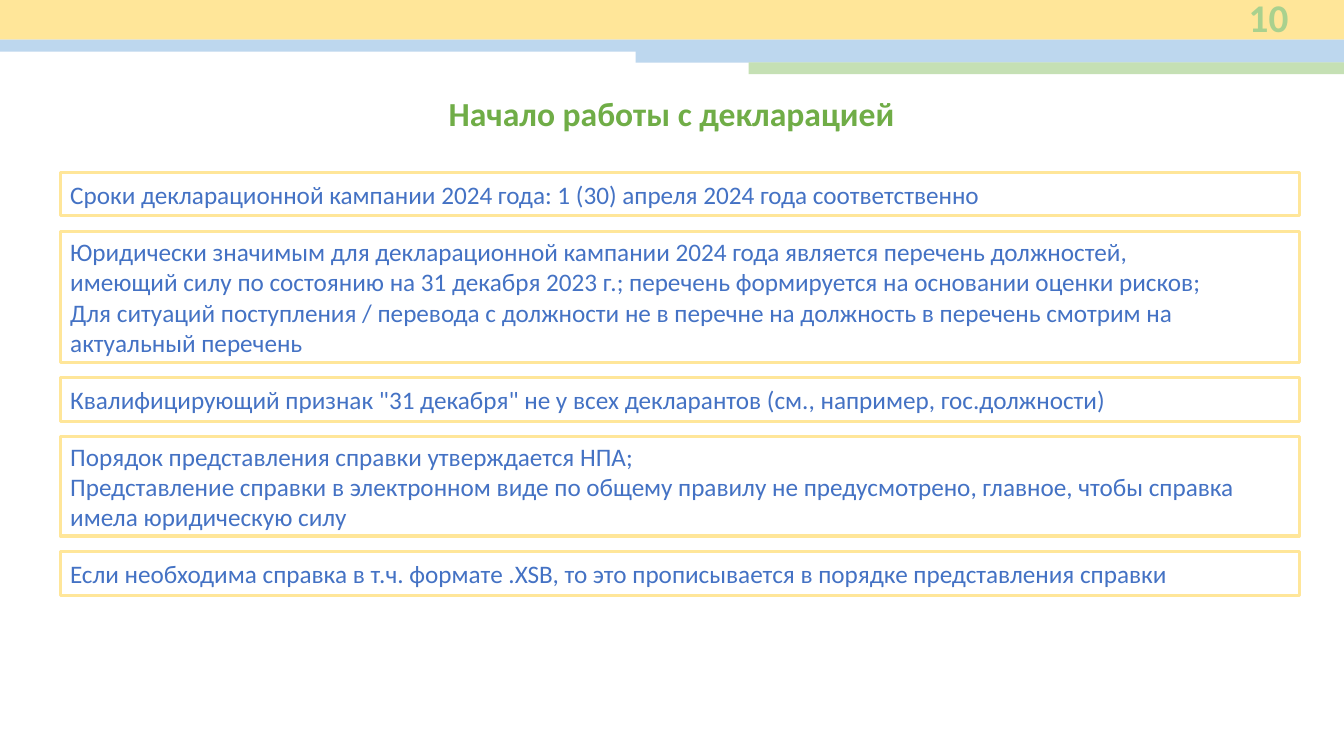
from pptx import Presentation
from pptx.dml.color import RGBColor
from pptx.enum.shapes import MSO_SHAPE
from pptx.enum.text import MSO_ANCHOR, MSO_AUTO_SIZE, PP_ALIGN
from pptx.util import Cm, Pt

YELLOW = RGBColor(0xFF, 0xE6, 0x99)
LIGHT_BLUE = RGBColor(0xBD, 0xD7, 0xEE)
LIGHT_GREEN = RGBColor(0xC5, 0xE0, 0xB4)
PAGE_GREEN = RGBColor(0xA9, 0xD1, 0x8E)
TITLE_GREEN = RGBColor(0x70, 0xAD, 0x47)
TEXT_BLUE = RGBColor(0x44, 0x72, 0xC4)

SLIDE_W, SLIDE_H = 33.87, 19.05
LEFT = 1.52
BOX_W, BOX_TOP, BOX_GAP = 31.22, 4.34, 0.39

# Left, top, height, colour; each band runs to the right edge
BANDS = [
    (0, 0, 1, YELLOW),
    (0, 1, 0.3, LIGHT_BLUE),
    (16.02, 1.28, 0.3, LIGHT_BLUE),
    (18.87, 1.57, 0.3, LIGHT_GREEN),
]

# Height and paragraphs of each box; "\n" is a line break
BOXES = [
    (1.1, ["Сроки декларационной кампании 2024 года: 1 (30) апреля 2024 года соответственно"]),
    (3.3, [
        "Юридически значимым для декларационной кампании 2024 года является перечень должностей,\n"
        "имеющий силу по состоянию на 31 декабря 2023 г.; перечень формируется на основании оценки рисков;",
        "Для ситуаций поступления / перевода с должности не в перечне на должность в перечень "
        "смотрим на актуальный перечень",
    ]),
    (1.1, ['Квалифицирующий признак "31 декабря" не у всех декларантов (см., например, гос.должности)']),
    (2.5, [
        "Порядок представления справки утверждается НПА;",
        "Представление справки в электронном виде по общему правилу не предусмотрено, "
        "главное, чтобы справка имела юридическую силу",
    ]),
    (1.1, ["Если необходима справка в т.ч. формате .XSB, то это прописывается в порядке представления справки"]),
]


def write(tf, paragraphs, size, color, bold=False, align=PP_ALIGN.LEFT, anchor=MSO_ANCHOR.MIDDLE):
    tf.word_wrap = True
    tf.auto_size = MSO_AUTO_SIZE.NONE
    tf.vertical_anchor = anchor
    for i, text in enumerate(paragraphs):
        p = tf.add_paragraph() if i else tf.paragraphs[0]
        p.alignment = align
        for j, line in enumerate(text.split("\n")):
            if j:
                p.add_line_break()
            r = p.add_run()
            r.text = line
            r.font.name = "Calibri"
            r.font.size = Pt(size)
            r.font.bold = bold
            r.font.color.rgb = color


def add_rect(s, left, top, width, height):
    sp = s.shapes.add_shape(MSO_SHAPE.RECTANGLE, Cm(left), Cm(top), Cm(width), Cm(height))
    sp.shadow.inherit = False
    return sp


def add_band(s, left, top, height, color):
    sp = add_rect(s, left, top, SLIDE_W - left, height)
    sp.fill.solid()
    sp.fill.fore_color.rgb = color
    sp.line.fill.background()


def add_box(s, top, height, paragraphs):
    sp = add_rect(s, LEFT, top, BOX_W, height)
    sp.fill.background()
    sp.line.color.rgb = YELLOW
    sp.line.width = Pt(2.25)
    write(sp.text_frame, paragraphs, 18, TEXT_BLUE)


def add_title(s, text):
    sp = s.shapes.title
    sp.left, sp.top, sp.width, sp.height = Cm(LEFT), Cm(2.21), Cm(30.81), Cm(1.28)
    write(sp.text_frame, [text], 24, TITLE_GREEN, True, PP_ALIGN.CENTER, MSO_ANCHOR.TOP)


def add_page_number(s, text):
    sp = s.shapes.add_textbox(Cm(29.54), Cm(-0.13), Cm(3.18), Cm(1.12))
    write(sp.text_frame, [text], 28, PAGE_GREEN, True, PP_ALIGN.RIGHT)


def main():
    prs = Presentation()
    prs.slide_width, prs.slide_height = Cm(SLIDE_W), Cm(SLIDE_H)
    s = prs.slides.add_slide(prs.slide_layouts[5])

    # Header
    for band in BANDS:
        add_band(s, *band)
    add_page_number(s, "10")
    add_title(s, "Начало работы с декларацией")

    # Stacked boxes
    top = BOX_TOP
    for height, paragraphs in BOXES:
        add_box(s, top, height, paragraphs)
        top += height + BOX_GAP

    prs.save("out.pptx")


if __name__ == "__main__":
    main()
